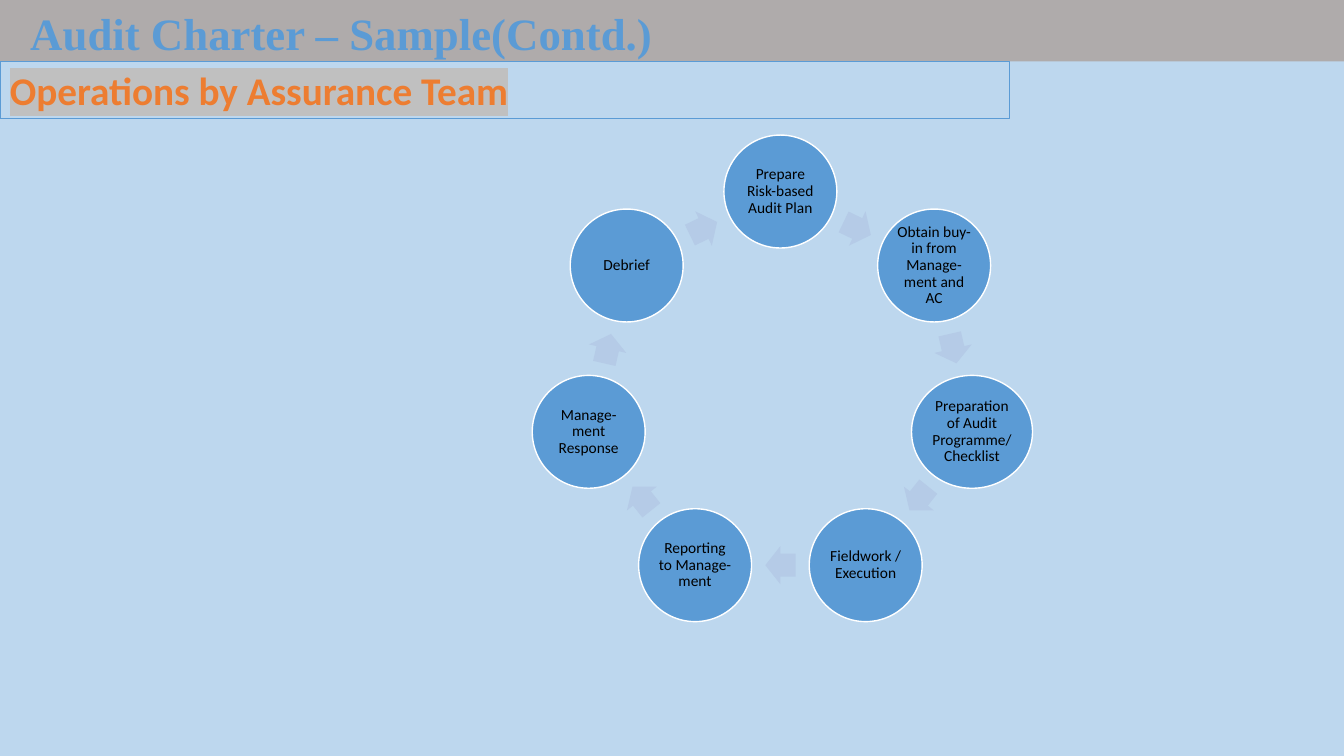
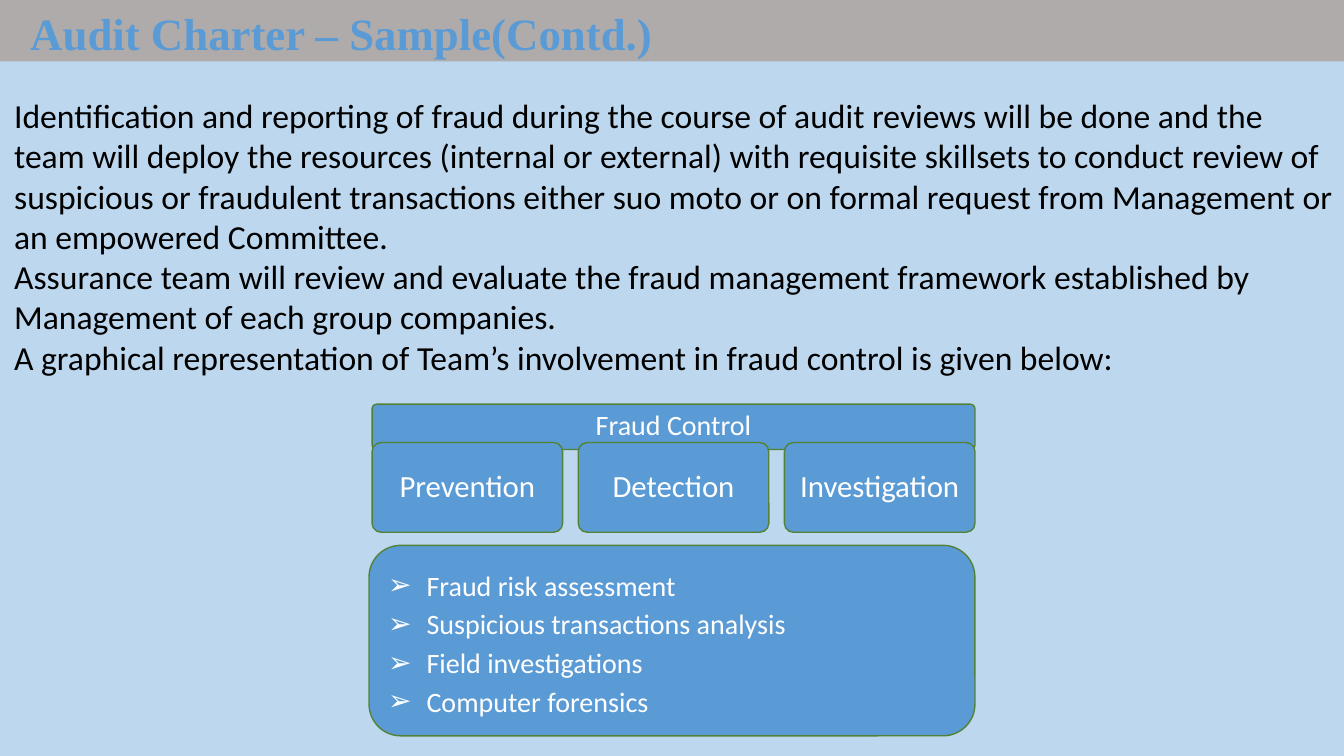
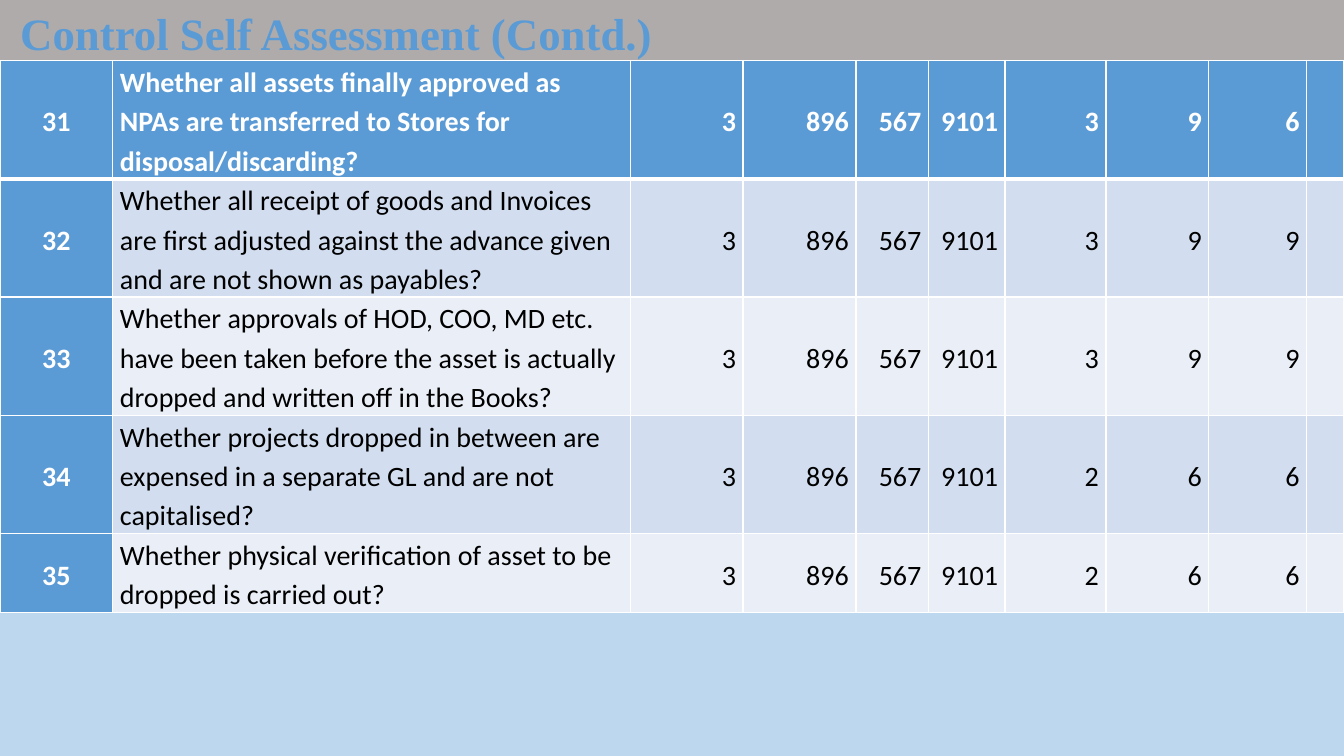
import math
from dataclasses import dataclass

from lxml import etree
from pptx import Presentation
from pptx.dml.color import RGBColor
from pptx.enum.shapes import MSO_SHAPE
from pptx.enum.text import MSO_ANCHOR, MSO_AUTO_SIZE, PP_ALIGN
from pptx.oxml.ns import qn
from pptx.util import Inches, Pt

RECTANGLE = MSO_SHAPE.RECTANGLE
ROUNDED = MSO_SHAPE.ROUNDED_RECTANGLE
OVAL = MSO_SHAPE.OVAL
ARROW = MSO_SHAPE.RIGHT_ARROW
MIDDLE = MSO_ANCHOR.MIDDLE
NO_AUTOFIT = MSO_AUTO_SIZE.NONE
LEFT, CENTER, RIGHT, JUSTIFY = PP_ALIGN.LEFT, PP_ALIGN.CENTER, PP_ALIGN.RIGHT, PP_ALIGN.JUSTIFY
TITLE_AND_BODY, TITLE_ONLY = 1, 5


@dataclass(frozen=True)
class Theme:
    """Colours, fonts and type sizes of the presentation."""
    background: str = "BDD7EE"
    band: str = "AFABAB"
    blue: str = "5B9BD5"
    arrow: str = "B5CBE7"
    orange: str = "ED7D31"
    highlight: str = "C0C0C0"
    green: str = "548235"
    white: str = "FFFFFF"
    black: str = "000000"
    row_dark: str = "D2DEEF"
    row_light: str = "EAEFF7"
    title_font: str = "Times New Roman"
    body_font: str = "Calibri"
    title_size: int = 32
    subtitle_size: int = 28
    body_size: int = 24
    pillar_size: int = 22
    list_size: int = 20
    cycle_size: int = 11


class Deck:
    """Builds slides in one style and keeps the current slide."""

    def __init__(self, theme):
        """Open a wide presentation with the shared background."""
        self.theme = theme
        self.slide = None
        self.presentation = Presentation()
        self.presentation.slide_width = Inches(13.33)
        self.presentation.slide_height = Inches(7.5)
        self.fill(self.presentation.slide_master.background, theme.background)

    def fill(self, target, color):
        """Give the target a solid fill."""
        target.fill.solid()
        target.fill.fore_color.rgb = RGBColor.from_string(color)

    def place(self, shape, left, top, width, height):
        """Move and size a shape in inches."""
        shape.left, shape.top = Inches(left), Inches(top)
        shape.width, shape.height = Inches(width), Inches(height)

    def frame(self, shape, inset=(0.1, 0.05)):
        """Set wrapping, anchor and insets of a text frame."""
        frame = shape.text_frame
        frame.word_wrap = True
        frame.auto_size = NO_AUTOFIT
        frame.vertical_anchor = MIDDLE
        frame.margin_left = frame.margin_right = Inches(inset[0])
        frame.margin_top = frame.margin_bottom = Inches(inset[1])
        return frame

    def add_text(self, frame, texts, size, color, align=LEFT, spacing=1.0, bold=False, font=None):
        """Add one paragraph with one run for each text."""
        for index, text in enumerate(texts):
            paragraph = frame.add_paragraph() if index else frame.paragraphs[0]
            paragraph.alignment = align
            paragraph.line_spacing = spacing
            paragraph.space_before = paragraph.space_after = Pt(0)
            run = paragraph.add_run()
            run.text = text
            run.font.size = Pt(size)
            run.font.bold = bold
            run.font.name = font or self.theme.body_font
            run.font.color.rgb = RGBColor.from_string(color)

    def bullets(self, frame, character=None, indent=0):
        """Give every paragraph a hanging bullet, or none."""
        for paragraph in frame.paragraphs:
            properties = paragraph._p.get_or_add_pPr()
            properties.set("marL", str(Inches(indent)))
            properties.set("indent", str(-Inches(indent)))
            if character:
                etree.SubElement(properties, qn("a:buFont"), typeface="Arial")
                etree.SubElement(properties, qn("a:buChar"), char=character)
            else:
                etree.SubElement(properties, qn("a:buNone"))

    def shape(self, kind, box, fill=None, line=None, width=1, adjustments=()):
        """Add a flat preset shape."""
        shape = self.slide.shapes.add_shape(kind, *map(Inches, box))
        shape.shadow.inherit = False
        for index, value in enumerate(adjustments):
            shape.adjustments[index] = value
        if fill:
            self.fill(shape, fill)
        else:
            shape.fill.background()
        if line:
            shape.line.color.rgb = RGBColor.from_string(line)
            shape.line.width = Pt(width)
        else:
            shape.line.fill.background()
        return shape

    def start(self, title, left=0.2, layout=TITLE_ONLY):
        """Start a slide with its title on the band."""
        theme = self.theme
        self.slide = self.presentation.slides.add_slide(self.presentation.slide_layouts[layout])
        holder = self.slide.shapes.title
        band = self.shape(RECTANGLE, (0, 0, 13.33, 0.61), theme.band)
        holder._element.addprevious(band._element)
        self.place(holder, left, 0.02, 13, 0.61)
        self.add_text(self.frame(holder), [title], theme.title_size, theme.blue,
                      bold=True, font=theme.title_font)

    def subtitle(self, text):
        """Add the outlined subtitle with highlighted text."""
        theme = self.theme
        shape = self.shape(RECTANGLE, (0, 0.61, 10.01, 0.57), line=theme.blue, width=0.75)
        frame = self.frame(shape)
        self.add_text(frame, [text], theme.subtitle_size, theme.orange, bold=True)
        color = frame.paragraphs[0].runs[0]._r.rPr.find(qn("a:solidFill"))
        highlight = etree.Element(qn("a:highlight"))
        etree.SubElement(highlight, qn("a:srgbClr"), val=theme.highlight)
        color.addnext(highlight)

    def body(self, texts, box):
        """Fill the body placeholder with plain paragraphs."""
        holder = self.slide.placeholders[1]
        self.place(holder, *box)
        frame = self.frame(holder, (0.1, 0))
        self.add_text(frame, texts, self.theme.body_size, self.theme.black)
        self.bullets(frame)

    def cycle(self, steps, center_x, center_y, radius, diameter):
        """Draw steps on a ring with an arrow between neighbours."""
        theme = self.theme
        turn = 2 * math.pi / len(steps)
        arrow_radius = radius * math.cos(turn / 2)
        arrow_width, arrow_height = 0.3, 0.38
        for index, (text, extra) in enumerate(steps):
            angle = index * turn
            width = diameter + extra
            x = center_x + radius * math.sin(angle)
            y = center_y - radius * math.cos(angle)
            circle = self.shape(OVAL, (x - width / 2, y - diameter / 2, width, diameter),
                                theme.blue, theme.white)
            self.add_text(self.frame(circle, (0.02, 0.02)), [text], theme.cycle_size,
                          theme.black, CENTER, 0.9)
            angle += turn / 2
            x = center_x + arrow_radius * math.sin(angle)
            y = center_y - arrow_radius * math.cos(angle)
            arrow = self.shape(ARROW, (x - arrow_width / 2, y - arrow_height / 2,
                                       arrow_width, arrow_height),
                               theme.arrow, adjustments=(0.6, 0.5))
            arrow.rotation = math.degrees(angle)

    def block(self, text, box, size):
        """Add a rounded block with a centred label."""
        theme = self.theme
        shape = self.shape(ROUNDED, box, theme.blue, theme.green, adjustments=(0.1,))
        self.add_text(self.frame(shape, (0.08, 0.08)), [text], size, theme.white, CENTER, 0.9)

    def list_panel(self, texts, box):
        """Add a rounded panel holding a bulleted list."""
        theme = self.theme
        frame = self.frame(self.shape(ROUNDED, box, theme.blue, theme.green))
        self.add_text(frame, texts, theme.list_size, theme.white, JUSTIFY, 1.15)
        frame.paragraphs[-1].space_after = Pt(10)
        self.bullets(frame, "➢", 0.38)

    def borders(self, cell, bottom):
        """Draw white borders around a cell."""
        properties = cell._tc.get_or_add_tcPr()
        for index, (side, width) in enumerate(zip("LRTB", (1, 1, 1, bottom))):
            line = etree.Element(qn("a:ln" + side), w=str(Pt(width)))
            color = etree.SubElement(etree.SubElement(line, qn("a:solidFill")), qn("a:srgbClr"))
            color.set("val", self.theme.white)
            properties.insert(index, line)

    def table(self, rows, left, top, widths, heights):
        """Add a table with a strong first row and first column."""
        theme = self.theme
        table = self.slide.shapes.add_table(
            len(rows), len(widths), Inches(left), Inches(top),
            Inches(sum(widths)), Inches(sum(heights))).table
        table.first_row = table.horz_banding = False
        for column, width in zip(table.columns, widths):
            column.width = Inches(width)
        for row, height in zip(table.rows, heights):
            row.height = Inches(height)
        for row_index, values in enumerate(rows):
            row_fill = theme.row_dark if row_index % 2 else theme.row_light
            for column_index, value in enumerate(values):
                strong = row_index == 0 or column_index == 0
                cell = table.cell(row_index, column_index)
                cell.vertical_anchor = MIDDLE
                cell.margin_left = cell.margin_right = Inches(0.07)
                cell.margin_top = cell.margin_bottom = 0
                self.fill(cell, theme.blue if strong else row_fill)
                self.borders(cell, 1 if row_index else 3)
                if value:
                    align = (CENTER, LEFT)[column_index] if column_index < 2 else RIGHT
                    self.add_text(cell.text_frame, [value], theme.list_size,
                                  theme.white if strong else theme.black, align, 1.15, strong)


def operations_slide(deck):
    """Build the cycle of assurance operations."""
    deck.start("Audit Charter – Sample(Contd.)")
    deck.cycle([
        ("Prepare Risk-based Audit Plan", 0),
        ("Obtain buy-in from Manage-ment and AC", 0),
        ("Preparation of Audit Programme/ Checklist", 0.08),
        ("Fieldwork / Execution", 0),
        ("Reporting to Manage-ment", 0),
        ("Manage-ment Response", 0),
        ("Debrief", 0),
    ], 7.74, 3.85, 1.95, 1.12)
    deck.subtitle("Operations by Assurance Team")


def fraud_slide(deck):
    """Build the fraud control slide."""
    deck.start("Audit Charter – Sample(Contd.)", layout=TITLE_AND_BODY)
    deck.body([
        "Identification and reporting of fraud during the course of audit reviews will be done "
        "and the team will deploy the resources (internal or external) with requisite skillsets "
        "to conduct review of suspicious or fraudulent transactions either suo moto or on formal "
        "request from Management or an empowered Committee.",
        "Assurance team will review and evaluate the fraud management framework established by "
        "Management of each group companies.",
        "A graphical representation of Team’s involvement in fraud control is given below:",
    ], (0.04, 0.92, 13.33, 2.84))
    left, width, pillar_width = 3.69, 5.98, 1.89
    pillars = ["Prevention", "Detection", "Investigation"]
    pitch = (width - pillar_width) / (len(pillars) - 1)
    deck.block("Fraud Control", (left, 4.01, width, 0.45), deck.theme.list_size)
    for index, pillar in enumerate(pillars):
        deck.block(pillar, (left + index * pitch, 4.39, pillar_width, 0.89),
                   deck.theme.pillar_size)
    deck.list_panel([
        "Fraud risk assessment",
        "Suspicious transactions analysis",
        "Field investigations",
        "Computer forensics",
    ], (3.66, 5.41, 6.01, 1.89))


def assessment_slide(deck):
    """Build the control self assessment table."""
    deck.start("Control Self Assessment (Contd.)", left=0.1)
    questions = [
        ("Whether all assets finally approved as NPAs are transferred to Stores for "
         "disposal/discarding?", "3", "9", "6"),
        ("Whether all receipt of goods and Invoices are first adjusted against the advance "
         "given and are not shown as payables?", "3", "9", "9"),
        ("Whether approvals of HOD, COO, MD etc. have been taken before the asset is actually "
         "dropped and written off in the Books?", "3", "9", "9"),
        ("Whether projects dropped in between are expensed in a separate GL and are not "
         "capitalised?", "2", "6", "6"),
        ("Whether physical verification of asset to be dropped is carried out?", "2", "6", "6"),
    ]
    rows = [[str(number), question, "3", "896", "567", "9101", *scores, ""]
            for number, (question, *scores) in enumerate(questions, 31)]
    deck.table(rows, 0, 0.6,
               [1.12, 5.13, 1.12, 1.12, 0.72, 0.76, 1, 1.02, 0.97, 0.37],
               [1.17] * 4 + [0.78])


def main():
    """Build and save the presentation."""
    deck = Deck(Theme())
    operations_slide(deck)
    fraud_slide(deck)
    assessment_slide(deck)
    deck.presentation.save("out.pptx")


if __name__ == "__main__":
    main()
